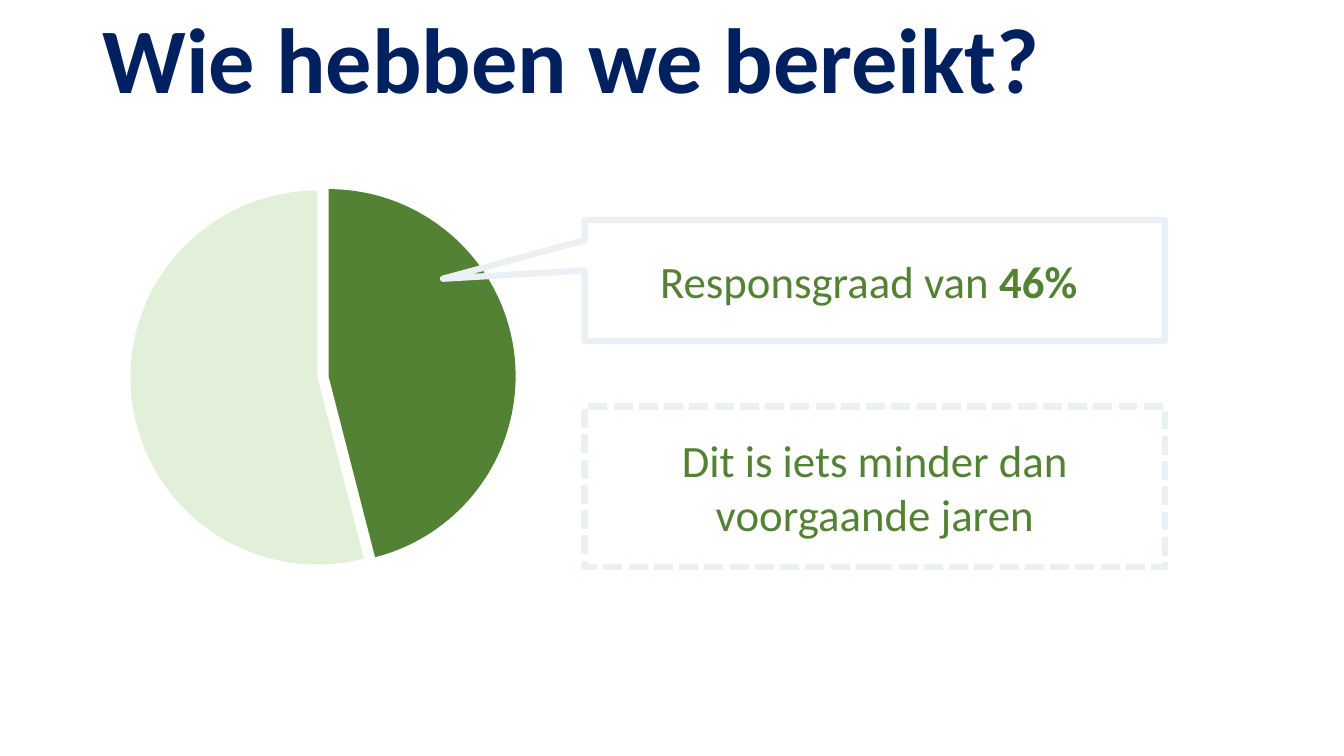
from dataclasses import dataclass

from pptx import Presentation
from pptx.chart.data import CategoryChartData
from pptx.dml.color import RGBColor
from pptx.enum.chart import XL_CHART_TYPE as ChartType
from pptx.enum.dml import MSO_LINE_DASH_STYLE as Dash
from pptx.enum.shapes import MSO_SHAPE as Shape
from pptx.enum.text import MSO_ANCHOR as Anchor, PP_ALIGN as Align
from pptx.oxml import parse_xml
from pptx.oxml.ns import nsdecls
from pptx.util import Inches, Pt


@dataclass(frozen=True)
class Theme:
    font: str = "Calibri"
    navy: RGBColor = RGBColor(0x00, 0x20, 0x60)
    green: RGBColor = RGBColor(0x54, 0x82, 0x35)
    pale_green: RGBColor = RGBColor(0xE2, 0xF0, 0xD9)
    frame: RGBColor = RGBColor(0xEB, 0xF0, 0xF4)
    title_size: Pt = Pt(66)
    body_size: Pt = Pt(32)
    chart_size: Pt = Pt(10)
    frame_width: Pt = Pt(4.5)


THEME = Theme()
SLIDE_WIDTH, SLIDE_HEIGHT = Inches(13.33), Inches(7.5)
COLUMNS, ROWS = 16, 9


@dataclass(frozen=True)
class Box:
    """An area in columns and rows of the slide grid."""
    left: float
    top: float
    width: float
    height: float

    def inset(self, across, down):
        return Box(self.left + across, self.top + down,
                   self.width - 2 * across, self.height - 2 * down)

    def place(self):
        column, row = SLIDE_WIDTH / COLUMNS, SLIDE_HEIGHT / ROWS
        return (round(self.left * column), round(self.top * row),
                round(self.width * column), round(self.height * row))


def add_text(slide, box, parts, size, color, align=Align.LEFT, anchor=Anchor.TOP):
    """Write one paragraph from (text, bold) parts and return it."""
    frame = slide.shapes.add_textbox(*box.place()).text_frame
    frame.word_wrap = True
    frame.vertical_anchor = anchor
    paragraph = frame.paragraphs[0]
    paragraph.alignment = align
    for text, bold in parts:
        run = paragraph.add_run()
        run.text = text
        run.font.name, run.font.size, run.font.bold = THEME.font, size, bold
        run.font.color.rgb = color
    return paragraph


def add_title(slide, box):
    title = add_text(slide, box, [("Wie hebben we bereikt?", True)],
                     THEME.title_size, THEME.navy, anchor=Anchor.MIDDLE)
    title.line_spacing = 0.9


def add_response_pie(slide, box):
    data = CategoryChartData()
    data.categories = ["1", "2"]
    data.add_series("Series 1", (46, 54))
    chart = slide.shapes.add_chart(ChartType.PIE, *box.place(), data).chart
    chart.has_legend = chart.has_title = False
    chart.font.name, chart.font.size = THEME.font, THEME.chart_size
    chart.font.color.rgb = RGBColor(0, 0, 0)
    plot = chart.plots[0]
    plot.vary_by_categories = False
    slices = plot.series[0].points
    for index, color in enumerate((THEME.green, THEME.pale_green)):
        fill = slices[index].format.fill
        fill.solid()
        fill.fore_color.rgb = color
        slices[index].format.line.fill.background()
    # Pull the response slice away from the rest
    response = plot.series[0].format.element if hasattr(plot.series[0].format, "element") \
        else plot._element.ser_lst[0]
    response.xpath("c:dPt[1]/c:spPr")[0].addprevious(
        parse_xml(f'<c:explosion {nsdecls("c")} val="6"/>'))


def add_framed_text(slide, box, shape, margins, parts, align, dash=None):
    """Draw an open frame with its text inside, and return the frame."""
    frame = slide.shapes.add_shape(shape, *box.place())
    frame.shadow.inherit = False
    frame.fill.background()
    frame.line.color.rgb = THEME.frame
    frame.line.width = THEME.frame_width
    if dash:
        frame.line.dash_style = dash
    add_text(slide, box.inset(*margins), parts, THEME.body_size, THEME.green, align)
    return frame


def add_findings(slide, box):
    # Response rate, pointing at its slice
    rate = add_framed_text(
        slide, Box(box.left, box.top, box.width, 1.44), Shape.RECTANGULAR_CALLOUT,
        (0.78, 0.34), [("Responsgraad van ", False), ("46%", True)], Align.LEFT)
    rate.adjustments[0], rate.adjustments[1] = -0.744, -0.015
    # Comparison with earlier years
    height = 1.91
    add_framed_text(
        slide, Box(box.left, box.top + box.height - height, box.width, height),
        Shape.RECTANGLE, (0.35, 0.25),
        [("Dit is iets minder dan voorgaande jaren", False)], Align.CENTER,
        Dash.SQUARE_DOT)


def main():
    deck = Presentation()
    deck.slide_width, deck.slide_height = SLIDE_WIDTH, SLIDE_HEIGHT
    slide = deck.slides.add_slide(deck.slide_layouts[6])
    add_title(slide, Box(1.1, 0, 13.8, 1.51))
    add_response_pie(slide, Box(0, 1.97, 7.56, 5.05))
    add_findings(slide, Box(6.96, 2.62, 6.91, 4.13))
    deck.save("out.pptx")


if __name__ == "__main__":
    main()
